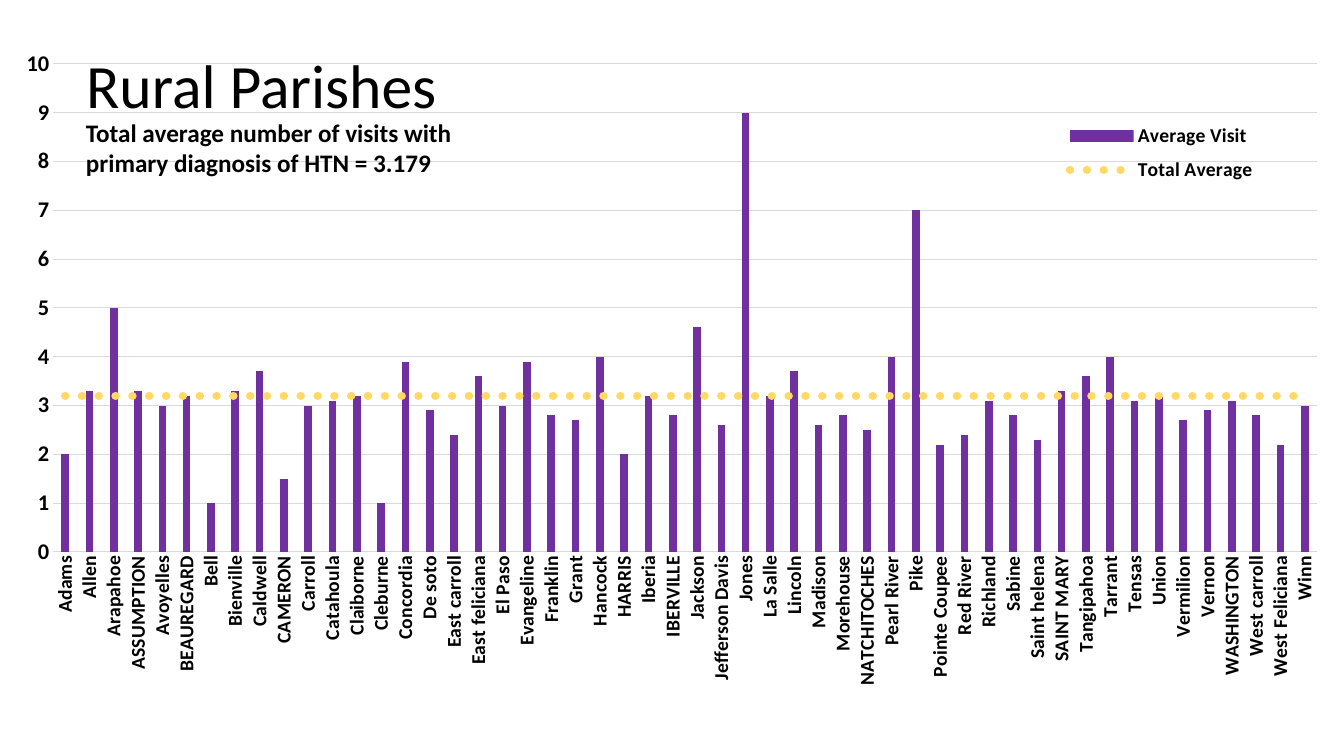
from dataclasses import dataclass

from lxml import etree
from pptx import Presentation
from pptx import util as u
from pptx.chart.data import CategoryChartData
from pptx.dml.color import RGBColor
from pptx.enum import chart as charts, dml, text
from pptx.oxml.ns import qn

PX = 914400 / 100.8  # EMU in one px


@dataclass(frozen=True)
class Theme:
    font: str = "Calibri"
    ink: str = "000000"
    grid: str = "D9D9D9"
    bar: str = "7030A0"
    average: str = "FFD966"
    title_size: int = 44
    note_size: int = 18
    value_size: int = 16
    label_size: int = 14


THEME = Theme()
AVERAGE = 3.2
VISITS = {
    "Adams": 2, "Allen": 3.3, "Arapahoe": 5, "ASSUMPTION": 3.3, "Avoyelles": 3,
    "BEAUREGARD": 3.2, "Bell": 1, "Bienville": 3.3, "Caldwell": 3.7,
    "CAMERON": 1.5, "Carroll": 3, "Catahoula": 3.1, "Claiborne": 3.2,
    "Cleburne": 1, "Concordia": 3.9, "De soto": 2.9, "East carroll": 2.4,
    "East feliciana": 3.6, "El Paso": 3, "Evangeline": 3.9, "Franklin": 2.8,
    "Grant": 2.7, "Hancock": 4, "HARRIS": 2, "Iberia": 3.2, "IBERVILLE": 2.8,
    "Jackson": 4.6, "Jefferson Davis": 2.6, "Jones": 9, "La Salle": 3.2,
    "Lincoln": 3.7, "Madison": 2.6, "Morehouse": 2.8, "NATCHITOCHES": 2.5,
    "Pearl River": 4, "Pike": 7, "Pointe Coupee": 2.2, "Red River": 2.4,
    "Richland": 3.1, "Sabine": 2.8, "Saint helena": 2.3, "SAINT MARY": 3.3,
    "Tangipahoa": 3.6, "Tarrant": 4, "Tensas": 3.1, "Union": 3.2,
    "Vermilion": 2.7, "Vernon": 2.9, "WASHINGTON": 3.1, "West carroll": 2.8,
    "West Feliciana": 2.2, "Winn": 3,
}


def emu(*lengths):
    return [u.Emu(round(length * PX)) for length in lengths]


def color(value):
    return RGBColor.from_string(value)


def style_font(font, size, bold=True):
    font.name, font.size, font.bold = THEME.font, u.Pt(size), bold
    font.color.rgb = color(THEME.ink)


def style_line(line, value, width):
    line.color.rgb = color(value)
    line.width = u.Pt(width)


def set_layout(parent, index, inner, box, frame):
    """Fix a chart part at box, in px from the corner of the chart frame."""
    for old in parent.findall(qn("c:layout")):
        parent.remove(old)
    layout = etree.Element(qn("c:layout"))
    manual = etree.SubElement(layout, qn("c:manualLayout"))
    settings = [("layoutTarget", "inner")] if inner else []
    settings += [("xMode", "edge"), ("yMode", "edge")]
    settings += [(key, f"{length / frame[2 + i % 2]:.4f}")
                 for i, (key, length) in enumerate(zip("xywh", box))]
    for tag, value in settings:
        etree.SubElement(manual, qn(f"c:{tag}")).set("val", value)
    parent.insert(index, layout)


def move_to_line_plot(chart):
    """Turn the second bar series into a line on the same axes."""
    bars = chart.plots[0]
    series = bars.series[1]._element
    bar_plot = series.getparent()
    lines = etree.Element(qn("c:lineChart"))
    etree.SubElement(lines, qn("c:grouping")).set("val", "standard")
    etree.SubElement(lines, qn("c:varyColors")).set("val", "0")
    for invert in series.findall(qn("c:invertIfNegative")):
        series.remove(invert)
    lines.append(series)
    etree.SubElement(lines, qn("c:marker")).set("val", "1")
    for axis in bar_plot.findall(qn("c:axId")):
        etree.SubElement(lines, qn("c:axId")).set("val", axis.get("val"))
    bar_plot.addnext(lines)


def style_axes(chart):
    parishes, visits = chart.category_axis, chart.value_axis
    for axis, size in ((parishes, THEME.label_size), (visits, THEME.value_size)):
        axis.major_tick_mark = axis.minor_tick_mark = charts.XL_TICK_MARK.NONE
        style_font(axis.tick_labels.font, size)
    style_line(parishes.format.line, THEME.grid, 0.75)
    parishes.has_major_gridlines = False
    parishes._element.find(qn("c:txPr")).find(qn("a:bodyPr")).set("rot", "-5400000")
    visits.minimum_scale, visits.maximum_scale, visits.major_unit = 0, 10, 1
    visits.format.line.fill.background()
    style_line(visits.major_gridlines.format.line, THEME.grid, 0.75)


def add_visits_chart(page, box):
    data = CategoryChartData()
    data.categories = list(VISITS)
    data.add_series("Average Visit", list(VISITS.values()))
    data.add_series("Total Average", [AVERAGE] * len(VISITS))
    chart = page.shapes.add_chart(
        charts.XL_CHART_TYPE.COLUMN_CLUSTERED, *emu(*box), data).chart
    chart.has_title = False
    style_font(chart.font, 10, bold=False)
    style_axes(chart)

    # Bars and the dotted average line
    move_to_line_plot(chart)
    bars, lines = chart.plots
    bars.gap_width, bars.overlap, bars.vary_by_categories = 219, -27, False
    visits, average = bars.series[0], lines.series[0]
    visits.invert_if_negative = False
    visits.format.fill.solid()
    visits.format.fill.fore_color.rgb = color(THEME.bar)
    average.smooth = False
    average.marker.style = charts.XL_MARKER_STYLE.NONE
    style_line(average.format.line, THEME.average, 6)
    average.format.line.dash_style = dml.MSO_LINE.ROUND_DOT
    average._element.find(qn("c:spPr")).find(qn("a:ln")).set("cap", "rnd")

    # Legend and plot area
    chart.has_legend = True
    legend = chart.legend
    legend.position = charts.XL_LEGEND_POSITION.BOTTOM
    legend.include_in_layout = False
    style_font(legend.font, THEME.label_size)
    set_layout(legend._element, 1, False, (1059, 79, 205, 78), box)
    plot_area = bars._element.getparent()
    set_layout(plot_area, 0, True, (53, 29, 1264, 488), box)


def add_heading(page, box):
    left, top, width, height = box

    # Title, brought in front of the chart
    title = page.shapes.title
    title.left, title.top, title.width, title.height = emu(left, top, width, height)
    title.element.getparent().append(title.element)
    frame = title.text_frame
    frame.text = "Rural Parishes"
    frame.vertical_anchor = text.MSO_ANCHOR.MIDDLE
    para = frame.paragraphs[0]
    para.alignment, para.line_spacing = text.PP_ALIGN.LEFT, 0.9
    style_font(para.runs[0].font, THEME.title_size, bold=False)

    # Note under the title
    note = page.shapes.add_textbox(*emu(left, top + 77, 421, 71)).text_frame
    note.word_wrap = True
    note.auto_size = text.MSO_AUTO_SIZE.SHAPE_TO_FIT_TEXT
    note.text = ("Total average number of visits with primary diagnosis "
                 "of HTN = 3.179")
    style_font(note.paragraphs[0].runs[0].font, THEME.note_size)


def main():
    deck = Presentation()
    deck.slide_width, deck.slide_height = emu(1344, 756)
    page = deck.slides.add_slide(deck.slide_layouts[5])
    add_visits_chart(page, (0, 35, 1344, 704))
    add_heading(page, (76, 35, 1051, 107))
    deck.save("out.pptx")


if __name__ == "__main__":
    main()
